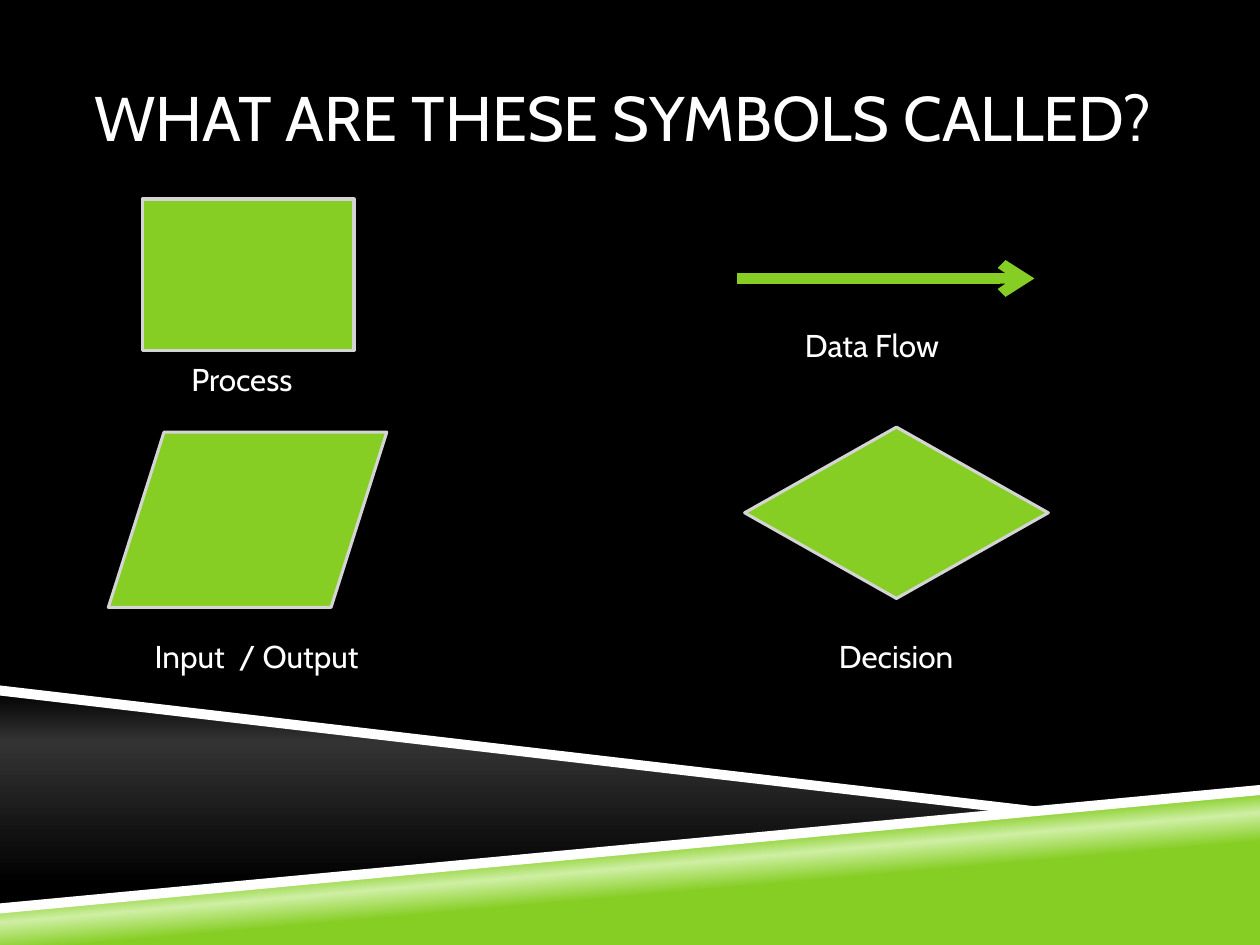
from typing import NamedTuple

from lxml import etree
from pptx import Presentation
from pptx import util as u
from pptx.dml.color import RGBColor
from pptx.enum import shapes, text
from pptx.oxml.ns import qn
from pptx.util import Inches

BLACK = RGBColor(0x00, 0x00, 0x00)
CHARCOAL = RGBColor(0x33, 0x33, 0x33)
WHITE = RGBColor(0xFF, 0xFF, 0xFF)
GREEN = RGBColor(0x86, 0xCE, 0x24)
PALE_GREEN = RGBColor(0xCF, 0xEF, 0xA4)
LIGHT_GREY = RGBColor(0xD4, 0xD4, 0xD4)
FONT = "Cabin"


class Gradient(NamedTuple):
    angle: int  # degrees clockwise
    stops: list[tuple[int, RGBColor]]  # percent, colour


class Band(NamedTuple):
    points: list[tuple[float, float]]
    fill: RGBColor | Gradient


class Symbol(NamedTuple):
    kind: shapes.MSO_SHAPE
    left: float
    top: float
    width: float
    height: float


class Label(NamedTuple):
    words: str
    left: float
    top: float
    width: float


BANDS = [
    Band([(0, 5.48), (8.14, 6.43), (0, 7.2)],
         Gradient(90, [(0, BLACK), (24, CHARCOAL), (90, BLACK)])),
    Band([(0, 7.21), (10, 6.27), (10, 7.5), (0, 7.5)],
         Gradient(265, [(39, GREEN), (50, PALE_GREEN), (58, GREEN)])),
    Band([(0, 5.44), (0, 5.52), (7.98, 6.45), (8.39, 6.42)], WHITE),
    Band([(10, 6.23), (0, 7.17), (0, 7.25), (10, 6.31)], WHITE),
]
SYMBOLS = [
    Symbol(shapes.MSO_SHAPE.RECTANGLE, 1.13, 1.58, 1.68, 1.2),
    Symbol(shapes.MSO_SHAPE.FLOWCHART_DATA, 0.86, 3.43, 2.21, 1.39),
    Symbol(shapes.MSO_SHAPE.FLOWCHART_DECISION, 5.91, 3.39, 2.41, 1.36),
]
LABELS = [
    Label("Data Flow", 6.29, 2.54, 1.65),
    Label("Decision", 6.56, 5.01, 1.65),
    Label("Process", 1.42, 2.81, 1.65),
    Label("Input  / Output", 1.13, 5.01, 2.56),
]


def apply_gradient(shape, gradient: Gradient) -> None:
    shape.fill.gradient()
    properties = shape._element.spPr.find(qn("a:gradFill"))
    stop_list = properties.find(qn("a:gsLst"))
    for stop in list(stop_list):
        stop_list.remove(stop)
    for percent, color in gradient.stops:
        stop = etree.SubElement(stop_list, qn("a:gs"), pos=str(percent * 1000))
        etree.SubElement(stop, qn("a:srgbClr"), val=str(color))
    properties.find(qn("a:lin")).set("ang", str(gradient.angle * 60000))


def draw_band(slide, band: Band) -> None:
    start, *others = [(Inches(x), Inches(y)) for x, y in band.points]
    builder = slide.shapes.build_freeform(*start)
    builder.add_line_segments(others, close=True)
    shape = builder.convert_to_shape()
    shape.shadow.inherit = False
    shape.line.fill.background()
    if isinstance(band.fill, Gradient):
        apply_gradient(shape, band.fill)
    else:
        shape.fill.solid()
        shape.fill.fore_color.rgb = band.fill


def draw_symbol(slide, symbol: Symbol) -> None:
    shape = slide.shapes.add_shape(
        symbol.kind, Inches(symbol.left), Inches(symbol.top),
        Inches(symbol.width), Inches(symbol.height))
    shape.shadow.inherit = False
    shape.fill.solid()
    shape.fill.fore_color.rgb = GREEN
    shape.line.color.rgb = LIGHT_GREY
    shape.line.width = u.Pt(1.75)


def draw_text(slide, label: Label, height: float = 0.4, size: int = 18):
    box = slide.shapes.add_textbox(
        Inches(label.left), Inches(label.top), Inches(label.width), Inches(height))
    frame = box.text_frame
    frame.text = label.words
    frame.word_wrap = True
    frame.auto_size = text.MSO_AUTO_SIZE.SHAPE_TO_FIT_TEXT
    font = frame.paragraphs[0].runs[0].font
    font.name = FONT
    font.size = u.Pt(size)
    font.color.rgb = WHITE
    return frame


def draw_title(slide) -> None:
    title = Label("WHAT ARE THESE SYMBOLS CALLED?", 0.75, 0.3, 8.5)
    frame = draw_text(slide, title, height=1.25, size=36)
    frame.auto_size = text.MSO_AUTO_SIZE.NONE
    frame.vertical_anchor = text.MSO_ANCHOR.MIDDLE
    frame.margin_left = frame.margin_right = 0


def draw_flow_arrow(slide) -> None:
    arrow = slide.shapes.add_connector(
        shapes.MSO_CONNECTOR.STRAIGHT,
        Inches(5.85), Inches(2.21), Inches(8.21), Inches(2.21))
    arrow.line.color.rgb = GREEN
    arrow.line.width = u.Pt(6)
    properties = arrow._element.spPr
    etree.SubElement(properties.find(qn("a:ln")), qn("a:tailEnd"), type="arrow")
    etree.SubElement(properties, qn("a:effectLst"))


def main() -> None:
    presentation = Presentation()
    presentation.slide_width = Inches(10)
    presentation.slide_height = Inches(7.5)
    slide = presentation.slides.add_slide(presentation.slide_layouts[6])
    slide.background.fill.solid()
    slide.background.fill.fore_color.rgb = BLACK

    # Decorative bands along the bottom
    for band in BANDS:
        draw_band(slide, band)

    # Title
    draw_title(slide)

    # Flowchart symbols and their names
    for symbol in SYMBOLS:
        draw_symbol(slide, symbol)
    draw_flow_arrow(slide)
    for label in LABELS:
        draw_text(slide, label)

    presentation.save("out.pptx")


if __name__ == "__main__":
    main()
